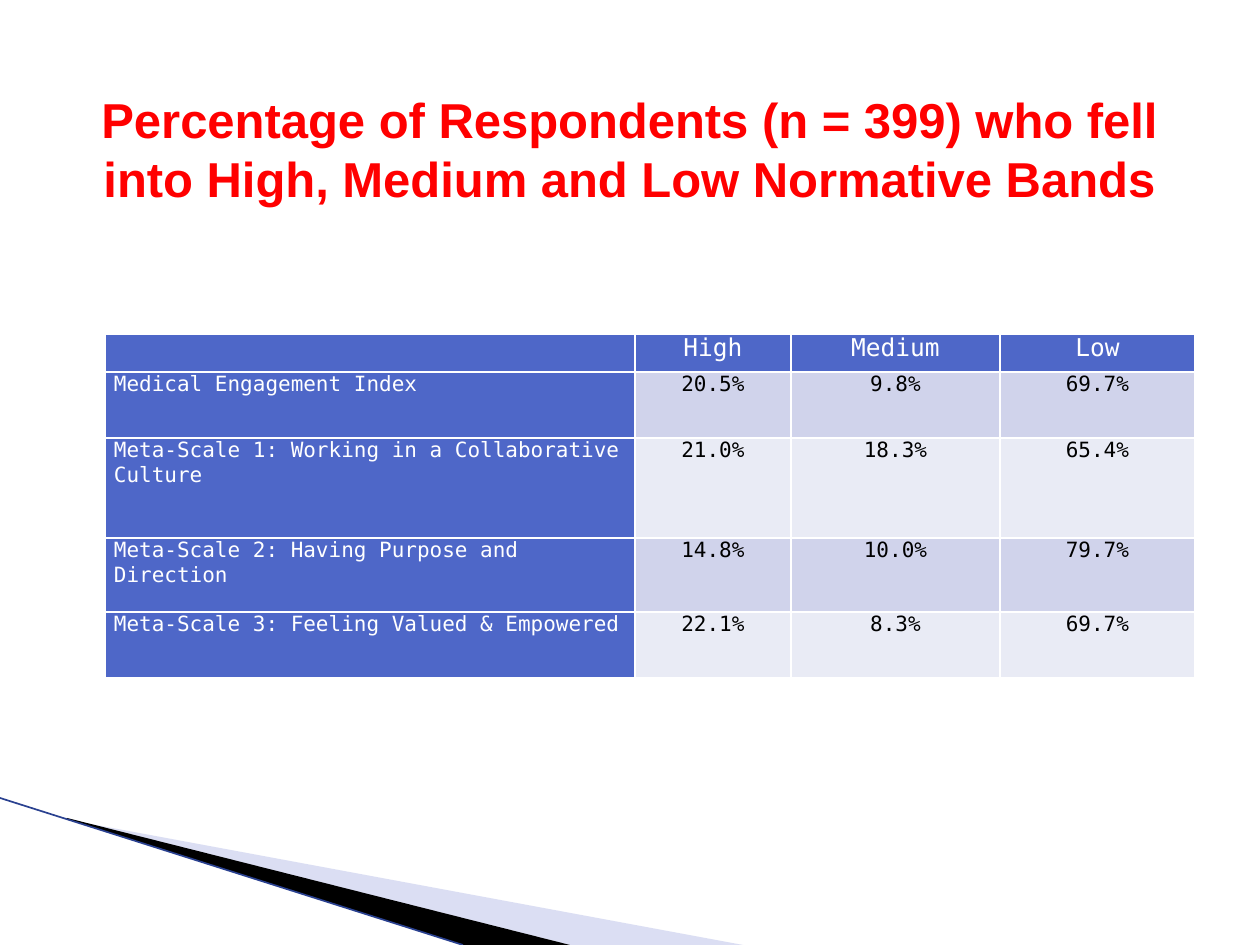
import pptx
import pptx.util
import pptx.dml.color
import pptx.enum.shapes
import pptx.enum.text
import pptx.oxml.ns
from lxml import etree

RGBColor = pptx.dml.color.RGBColor
WHITE = RGBColor(0xFF, 0xFF, 0xFF)
BLACK = RGBColor(0, 0, 0)
RED = RGBColor(0xFF, 0, 0)
BLUE = RGBColor(0x4E, 0x67, 0xC8)
NAVY = RGBColor(0x2A, 0x41, 0x90)
PERIWINKLE = RGBColor(0xA6, 0xAE, 0xE1)
BANDS = [RGBColor(0xD0, 0xD3, 0xEB), RGBColor(0xE9, 0xEB, 0xF5)]

TITLE = "Percentage of Respondents (n = 399) who fell into High, Medium and Low Normative Bands"
ROWS = [
    ("", "High", "Medium", "Low"),
    ("Medical Engagement Index", "20.5%", "9.8%", "69.7%"),
    ("Meta-Scale 1: Working in a Collaborative Culture", "21.0%", "18.3%", "65.4%"),
    ("Meta-Scale 2: Having Purpose and Direction", "14.8%", "10.0%", "79.7%"),
    ("Meta-Scale 3: Feeling Valued & Empowered", "22.1%", "8.3%", "69.7%"),
]
COLUMN_WIDTHS = [530, 156, 209, 195]
ROW_HEIGHTS = [38, 66, 100, 74, 66]
TABLE_LEFT, TABLE_TOP = 105, 334
WEDGES = [
    (PERIWINKLE, 40, [(69, 820), (743, 945), (570, 945), (69, 819)]),
    (BLACK, 100, [(67, 818), (570, 945), (463, 945), (67, 819)]),
]
EDGE = [(0, 798), (463, 945)]
SCALE = 914400 / 126


def px(length):
    return pptx.util.Emu(round(length * SCALE))


def add_child(parent, tag, **attributes):
    return etree.SubElement(parent, pptx.oxml.ns.qn(tag), **attributes)


def add_wedge(slide, color, opacity, points):
    builder = slide.shapes.build_freeform(*points[0], scale=SCALE)
    builder.add_line_segments(points[1:], close=True)
    shape = builder.convert_to_shape()
    shape.shadow.inherit = False
    shape.line.fill.background()
    shape.fill.solid()
    shape.fill.fore_color.rgb = color
    if opacity < 100:
        fill_color = shape.fill._xPr.find(".//" + pptx.oxml.ns.qn("a:srgbClr"))
        add_child(fill_color, "a:alpha", val=str(opacity * 1000))


def add_edge(slide):
    (left, top), (right, bottom) = EDGE
    connector = slide.shapes.add_connector(
        pptx.enum.shapes.MSO_CONNECTOR.STRAIGHT, px(left), px(top), px(right), px(bottom))
    connector.line.color.rgb = NAVY
    connector.line.width = pptx.util.Pt(0.95)
    add_child(connector._element.spPr, "a:effectLst")


def format_cell(cell, text, row, column):
    cell.margin_left = cell.margin_right = px(9)
    cell.margin_top = cell.margin_bottom = 0
    properties = cell._tc.get_or_add_tcPr()
    for side in ("a:lnL", "a:lnR", "a:lnT", "a:lnB"):
        border = add_child(properties, side, w=str(pptx.util.Pt(1)))
        add_child(add_child(border, "a:solidFill"), "a:srgbClr", val=str(WHITE))
    is_heading = row == 0 or column == 0
    cell.fill.solid()
    cell.fill.fore_color.rgb = BLUE if is_heading else BANDS[(row - 1) % 2]
    cell.text_frame.text = text
    paragraph = cell.text_frame.paragraphs[0]
    if column:
        paragraph.alignment = pptx.enum.text.PP_ALIGN.CENTER
    paragraph.font.size = pptx.util.Pt(12 if row else 14)
    for run in paragraph.runs:
        run.font.name = "DejaVu Sans Mono"
        run.font.size = paragraph.font.size
        run.font.bold = False
        run.font.color.rgb = WHITE if is_heading else BLACK


def add_band_table(slide):
    table = slide.shapes.add_table(
        len(ROWS), len(COLUMN_WIDTHS), px(TABLE_LEFT), px(TABLE_TOP),
        px(sum(COLUMN_WIDTHS)), px(sum(ROW_HEIGHTS))).table
    for column, width in zip(table.columns, COLUMN_WIDTHS):
        column.width = px(width)
    for table_row, height in zip(table.rows, ROW_HEIGHTS):
        table_row.height = px(height)
    for row, texts in enumerate(ROWS):
        for column, text in enumerate(texts):
            format_cell(table.cell(row, column), text, row, column)


def format_title(title):
    title.left, title.top, title.width, title.height = px(44), px(81), px(1171), px(170)
    frame = title.text_frame
    frame.text = TITLE
    frame.word_wrap = True
    frame.auto_size = pptx.enum.text.MSO_AUTO_SIZE.NONE
    frame.vertical_anchor = pptx.enum.text.MSO_ANCHOR.MIDDLE
    frame.margin_bottom = px(42)
    paragraph = frame.paragraphs[0]
    paragraph.alignment = pptx.enum.text.PP_ALIGN.CENTER
    font = paragraph.runs[0].font
    font.name = "Arial"
    font.size = pptx.util.Pt(28)
    font.bold = True
    font.color.rgb = RED


def main():
    presentation = pptx.Presentation()
    presentation.slide_width, presentation.slide_height = px(1260), px(945)
    slide = presentation.slides.add_slide(presentation.slide_layouts[5])
    for wedge in WEDGES:
        add_wedge(slide, *wedge)
    add_edge(slide)
    add_band_table(slide)
    format_title(slide.shapes.title)
    presentation.save("out.pptx")


if __name__ == "__main__":
    main()
